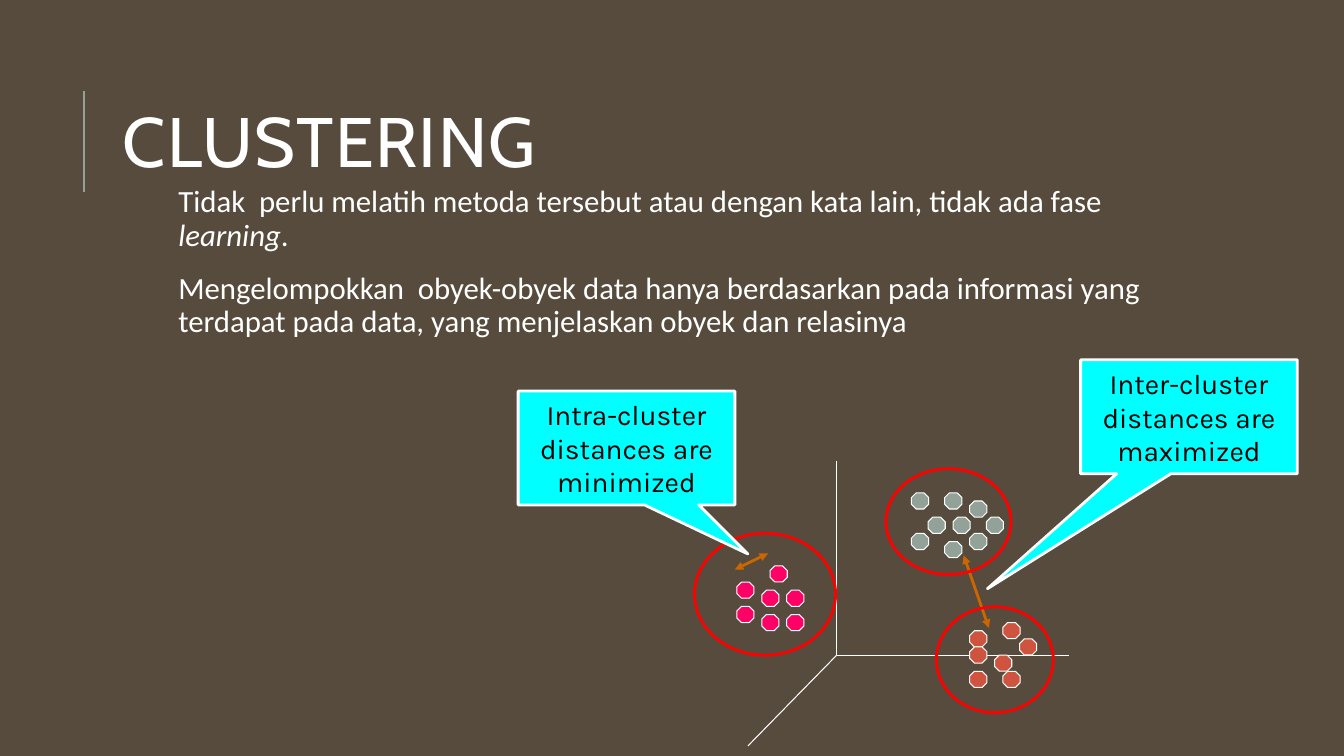
from pptx import Presentation
from pptx import util as u
from pptx.dml.color import RGBColor
from pptx.enum import shapes, text
from pptx.oxml.ns import qn
from lxml import etree

THEME = {
    "background": "564B3C", "text": "FFFFFF", "accent": "93A299",
    "pink": "FF0066", "brick": "CF543F", "ring": "FF0000",
    "arrow": "CC6600", "callout": "00FFFF", "callout_text": "000000",
    "title_font": "Cabin", "body_font": "Calibri", "callout_font": "Karla",
    "title_size": 50, "body_size": 22, "callout_size": 20,
    "hairline": 0.75, "rule": 1.5, "thick": 2,
}
CELL = u.Inches(0.1)  # side of one square of the slide grid


def cells(*counts):
    return [round(count * CELL) for count in counts]


def color(name):
    return RGBColor.from_string(THEME[name])


presentation = Presentation()
presentation.slide_width, presentation.slide_height = cells(133.33, 75)
slide = presentation.slides.add_slide(presentation.slide_layouts[6])
slide.background.fill.solid()
slide.background.fill.fore_color.rgb = color("background")

# Title and body: box, anchor, inset, line spacing, font, paragraphs of (words, italic) runs
text_blocks = [
    ((11.2, 6.4, 106.3, 16.4), text.MSO_ANCHOR.MIDDLE, 1, 0.8, "title",
     [[("CLUSTERING", False)]]),
    ((16.2, 18, 101, 42.4), text.MSO_ANCHOR.TOP, 0.5, 0.9, "body",
     [[("Tidak  perlu melatih metoda tersebut atau dengan kata lain, tidak ada fase ", False),
       ("learning", True), (".", False)],
      [("Mengelompokkan  obyek-obyek data hanya berdasarkan pada informasi yang "
        "terdapat pada data, yang menjelaskan obyek dan relasinya", False)]]),
]
for box, anchor, inset, spacing, style, paragraphs in text_blocks:
    frame = slide.shapes.add_textbox(*cells(*box)).text_frame
    frame.word_wrap = True
    frame.vertical_anchor = anchor
    frame.margin_left, frame.margin_right = cells(inset, inset)
    for number, runs in enumerate(paragraphs):
        paragraph = frame.add_paragraph() if number else frame.paragraphs[0]
        paragraph.line_spacing = spacing
        if style == "body":
            paragraph.space_before, paragraph.space_after = u.Pt(12), u.Pt(2)
            paragraph._p.get_or_add_pPr().set("marL", str(CELL))
        for words, italic in runs:
            run = paragraph.add_run()
            run.text = words
            run.font.name = THEME[f"{style}_font"]
            run.font.size = u.Pt(THEME[f"{style}_size"])
            run.font.color.rgb = color("text")
            run.font.italic = italic
            if style == "title":
                run._r.get_or_add_rPr().set("spc", "100")

# Title rule, the three axes and the two distance arrows
origin = (83, 65)
lines = [
    ((8.3, 19), (8.3, 9), "accent", "rule"),
    ((83, 45.7), origin, "text", "hairline"),
    (origin, (106.1, 65), "text", "hairline"),
    (origin, (74.2, 74), "text", "hairline"),
    ((98.1, 62.3), (95.6, 55.1), "arrow", "thick"),
    ((72.9, 56.5), (76.2, 54.9), "arrow", "thick"),
]
for start, end, tint, weight in lines:
    connector = slide.shapes.add_connector(
        shapes.MSO_CONNECTOR.STRAIGHT, *cells(*start, *end))
    connector.line.color.rgb = color(tint)
    connector.line.width = u.Pt(THEME[weight])
    if tint == "arrow":
        for tip in ("a:headEnd", "a:tailEnd"):
            etree.SubElement(connector.line._ln, qn(tip), type="triangle")
    etree.SubElement(connector._element.spPr, qn("a:effectLst"))

# Shapes: kind, box, adjustments, fill, line, weight, words
OCTAGON = shapes.MSO_SHAPE.OCTAGON
OVAL = shapes.MSO_SHAPE.OVAL
CALLOUT = shapes.MSO_SHAPE.RECTANGULAR_CALLOUT
lattice_left, lattice_top = 73.1, 48.9
column_step, row_step = 3.3 / 4, 17.7 / 22
clusters = {  # lattice (column, row) of each dot
    "accent": [(23, 3), (26, 3), (25, 0), (25, 6), (30, 3), (28, 1),
               (21, 0), (28, 5), (21, 5)],
    "pink": [(0, 11), (3, 12), (3, 15), (6, 12), (4, 9), (6, 15), (0, 14)],
    "brick": [(28, 17), (34, 18), (31, 20), (28, 22), (32, 22), (28, 19), (32, 16)],
}
figures = [
    (OCTAGON,
     (lattice_left + column * column_step, lattice_top + row * row_step, 1.7, 1.6),
     [0.29], tint, "text", "hairline", "")
    for tint, dots in clusters.items() for column, row in dots
]
figures += [
    (OVAL, ring, [], None, "ring", "thick", "")
    for ring in [(68.9, 52.9, 14, 12.1), (87.9, 46.5, 12.4, 10.5), (92.9, 60.2, 11.6, 10.5)]
]
figures += [
    (CALLOUT, (left, top, 21.5, 11.3), pointer, "callout", "text", "thick", words)
    for left, top, pointer, words in [
        (107.2, 35.7, (-0.93, 1.51), "Inter-cluster distances are maximized"),
        (51.4, 38.8, (0.56, 0.93), "Intra-cluster distances are minimized"),
    ]
]
for kind, box, adjustments, fill, outline, weight, words in figures:
    shape = slide.shapes.add_shape(kind, *cells(*box))
    shape.shadow.inherit = False
    for index, value in enumerate(adjustments):
        shape.adjustments[index] = value
    if fill:
        shape.fill.solid()
        shape.fill.fore_color.rgb = color(fill)
    else:
        shape.fill.background()
    shape.line.color.rgb = color(outline)
    shape.line.width = u.Pt(THEME[weight])
    if words:
        shape.text_frame.word_wrap = True
        paragraph = shape.text_frame.paragraphs[0]
        paragraph.alignment = text.PP_ALIGN.CENTER
        run = paragraph.add_run()
        run.text = words
        run.font.name = THEME["callout_font"]
        run.font.size = u.Pt(THEME["callout_size"])
        run.font.color.rgb = color("callout_text")

presentation.save("out.pptx")
